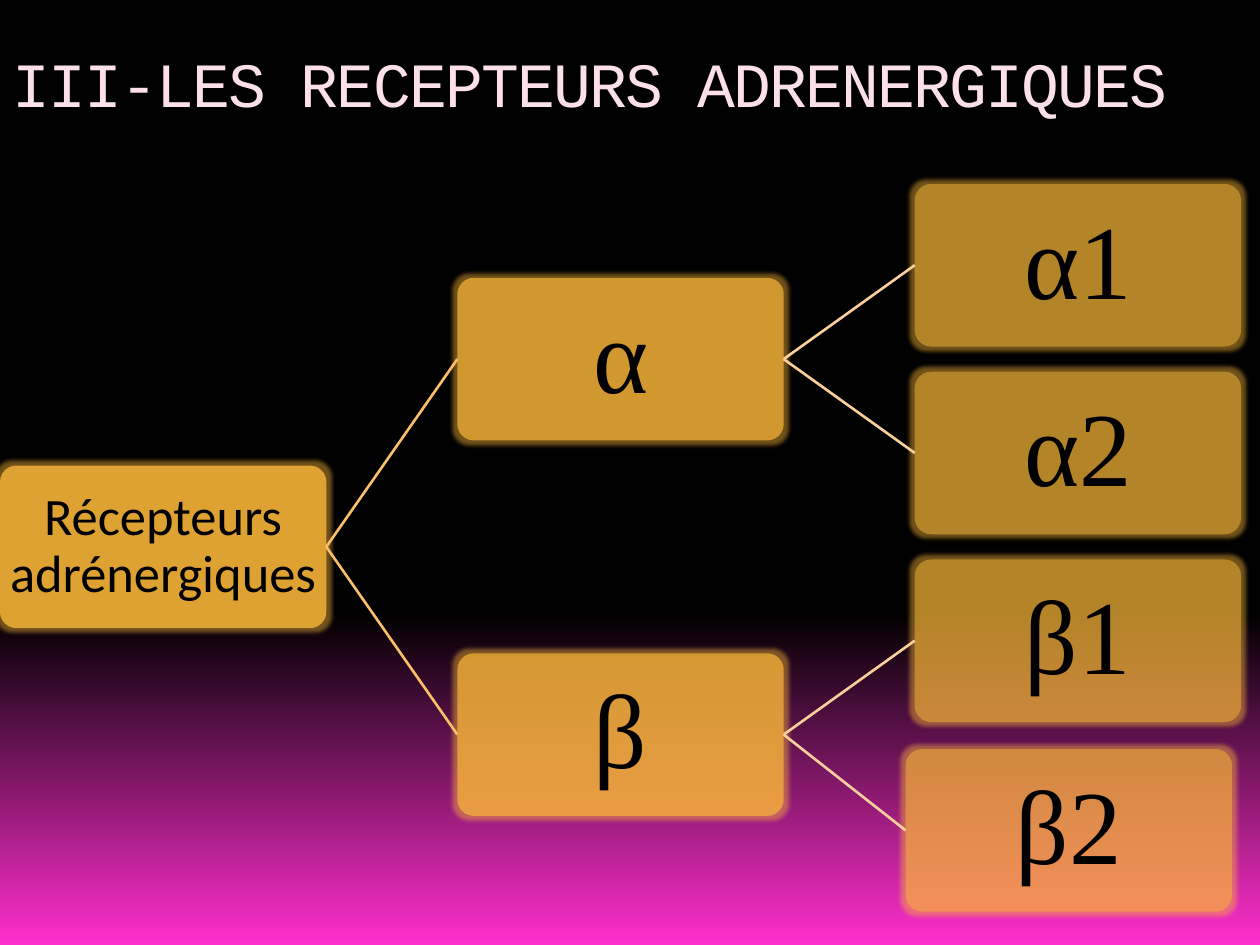
"""Builds the slide showing the tree of adrenergic receptors."""
from lxml import etree
from pptx import Presentation
from pptx.dml.color import RGBColor
from pptx.enum.shapes import MSO_CONNECTOR, MSO_SHAPE
from pptx.enum.text import MSO_ANCHOR, MSO_AUTO_SIZE, PP_ALIGN
from pptx.oxml.ns import qn
from pptx.util import Inches, Pt

ROUNDED = MSO_SHAPE.ROUNDED_RECTANGLE
STRAIGHT = MSO_CONNECTOR.STRAIGHT
TOP, MIDDLE = MSO_ANCHOR.TOP, MSO_ANCHOR.MIDDLE
LEFT, CENTER = PP_ALIGN.LEFT, PP_ALIGN.CENTER
NO_FIT = MSO_AUTO_SIZE.NONE
TITLE_ONLY = 5
LEFT_SITE, RIGHT_SITE = 1, 3


def colour(value):
    return RGBColor.from_string(value)


def add_alpha(colour_element, percent):
    etree.SubElement(colour_element, qn("a:alpha"), val=str(percent * 1000))


class TreeSlide:
    gold, ink, pale = "F9B639", "000000", "FBE0EC"
    column_step, row_step, first_row = 3.63, 1.49, 1.46
    node_width, node_height = 2.59, 1.29

    def __init__(self, deck):
        self.slide = deck.slides.add_slide(deck.slide_layouts[TITLE_ONLY])

    def background(self, start, end, start_share):
        fill = self.slide.background.fill
        fill.gradient()
        fill.gradient_angle = 270
        for stop, value, share in zip(fill.gradient_stops, (start, end), (start_share, 1)):
            stop.color.rgb = colour(value)
            stop.position = share

    def title(self, text):
        heading = self.slide.shapes.title
        heading.left, heading.top = Inches(0), Inches(0.3)
        heading.width, heading.height = Inches(10), Inches(1.25)
        frame = heading.text_frame
        frame.text = text
        frame.auto_size = NO_FIT
        frame.vertical_anchor = TOP
        frame.margin_top = Inches(0.05)
        paragraph = frame.paragraphs[0]
        paragraph.alignment = LEFT
        self.style(paragraph, "Courier New", 36, self.pale)
        paragraph.runs[0].font._element.set("spc", "-100")

    def style(self, paragraph, face, size, value):
        font = paragraph.font
        font.name, font.size = face, Pt(size)
        font.color.rgb = colour(value)

    def node(self, text, column, row, opacity, face="Times New Roman", size=60, inset=0.04):
        box = self.slide.shapes.add_shape(
            ROUNDED,
            Inches(column * self.column_step),
            Inches(self.first_row + row * self.row_step),
            Inches(self.node_width),
            Inches(self.node_height),
        )
        box.adjustments[0] = 0.1
        box.fill.solid()
        box.fill.fore_color.rgb = colour(self.gold)
        box.line.fill.background()
        box.shadow.inherit = False
        properties = box._element.spPr
        add_alpha(properties.find(qn("a:solidFill"))[0], opacity)
        glow = etree.SubElement(
            properties.find(qn("a:effectLst")), qn("a:glow"), rad=str(Pt(5))
        )
        add_alpha(etree.SubElement(glow, qn("a:srgbClr"), val=self.gold), 45)

        frame = box.text_frame
        frame.text = text
        frame.word_wrap = True
        frame.vertical_anchor = MIDDLE
        frame.margin_left = frame.margin_right = Inches(inset)
        frame.margin_top = frame.margin_bottom = Inches(inset)
        paragraph = frame.paragraphs[0]
        paragraph.alignment = CENTER
        paragraph.line_spacing = 0.9
        self.style(paragraph, face, size, self.ink)
        return box

    def branch(self, parent, child, value):
        link = self.slide.shapes.add_connector(STRAIGHT, 0, 0, 0, 0)
        link.begin_connect(parent, RIGHT_SITE)
        link.end_connect(child, LEFT_SITE)
        link.line.color.rgb = colour(value)
        link.line.width = Pt(1.5)
        etree.SubElement(link._element.spPr, qn("a:effectLst"))


def main():
    deck = Presentation()
    deck.slide_width, deck.slide_height = Inches(10), Inches(7.5)
    tree = TreeSlide(deck)
    tree.background("000000", "FF2FCD", 0.65)
    tree.title("III-LES RECEPTEURS ADRENERGIQUES")

    root = tree.node("Récepteurs adrénergiques", 0, 1.5, 80, "Calibri", 30, 0.02)
    families = (
        ("α", 0.5, (("α1", 2, 0), ("α2", 2, 1))),
        ("β", 2.5, (("β1", 2, 2), ("β2", 1.98, 3.01))),
    )
    for family, row, subtypes in families:
        receptor = tree.node(family, 1, row, 70)
        tree.branch(root, receptor, "FABF69")
        for subtype, column, subtype_row in subtypes:
            leaf = tree.node(subtype, column, subtype_row, 50)
            tree.branch(receptor, leaf, "FBCF9C")

    deck.save("out.pptx")


if __name__ == "__main__":
    main()
